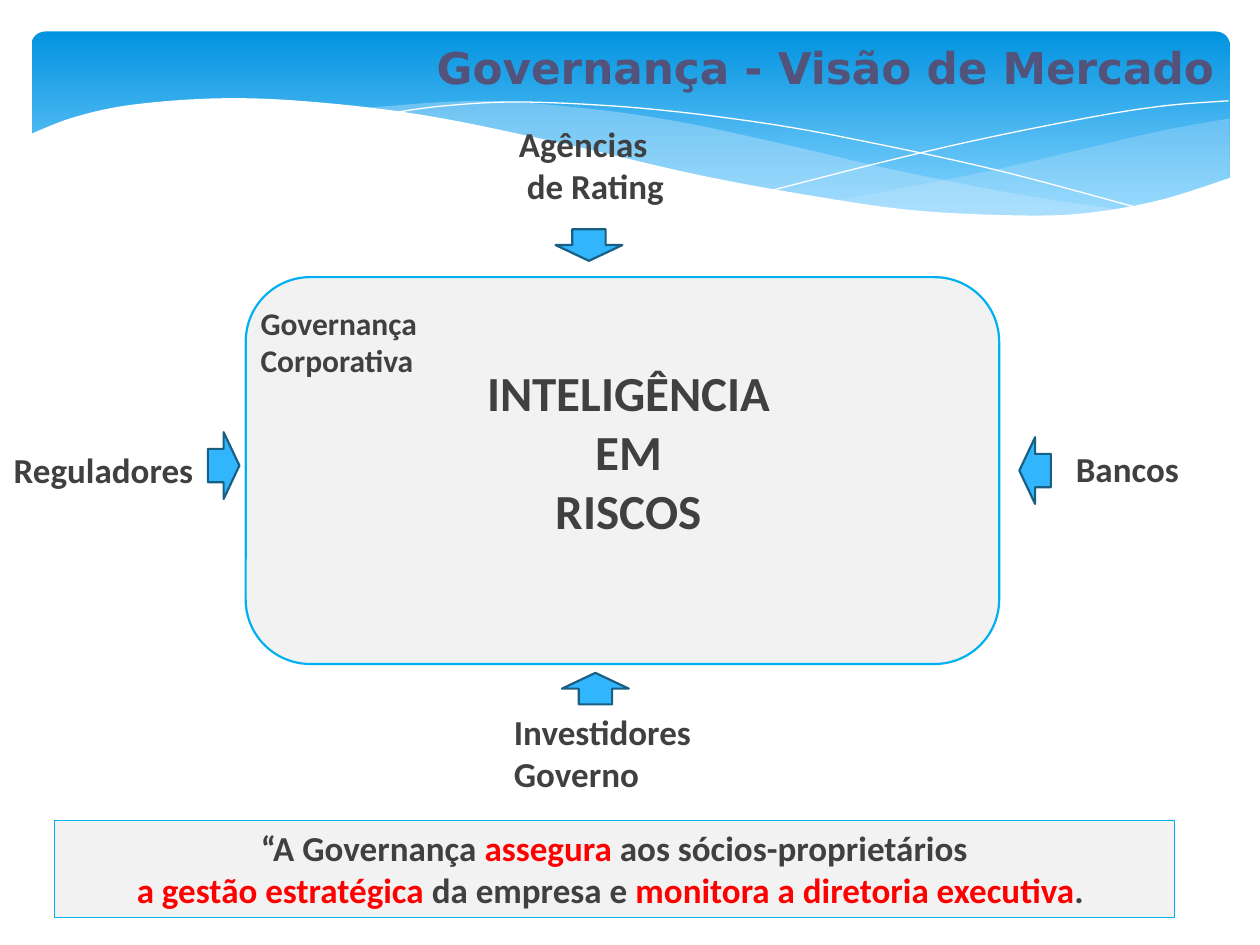
from dataclasses import dataclass

from lxml import etree
from pptx import Presentation
from pptx.dml.color import RGBColor
from pptx.enum.shapes import MSO_SHAPE
from pptx.enum.text import MSO_ANCHOR, MSO_AUTO_SIZE, PP_ALIGN
from pptx.oxml.ns import qn
from pptx.util import Inches, Pt

RECT = MSO_SHAPE.RECTANGLE
ROUND = MSO_SHAPE.ROUNDED_RECTANGLE
ARROW = MSO_SHAPE.DOWN_ARROW
LEFT, CENTER = PP_ALIGN.LEFT, PP_ALIGN.CENTER
TOP, MIDDLE = MSO_ANCHOR.TOP, MSO_ANCHOR.MIDDLE
FIT = MSO_AUTO_SIZE.SHAPE_TO_FIT_TEXT

DARK, RED, WHITE = "404040", "FF0000", "FFFFFF"
GRAY, CYAN, BLUE, NAVY = "F2F2F2", "00B0F0", "31B6FD", "195F84"

Point = tuple[float, float]
Box = tuple[float, float, float, float]
Run = tuple[str, str]


@dataclass
class Wave:
    arcs: list[list[Point]]
    fill: str = ""
    alpha: int = 100


@dataclass
class Label:
    box: Box
    lines: list[str]
    size: int = 20
    align: PP_ALIGN = LEFT


@dataclass
class Arrow:
    left: float
    top: float
    turn: int


WAVES = [
    Wave([[(9.76, 0.94), (9.21, 1.04), (8.61, 1.18), (7.79, 1.37), (6.61, 1.6)],
          [(6.61, 1.6), (7.32, 1.68), (8.03, 1.72), (8.72, 1.69), (9.28, 1.58),
           (9.76, 1.41)]], "C6E7FC", 29),
    Wave([[(8.93, 1.67), (8.07, 1.54), (7.06, 1.34), (6.29, 1.16), (5.41, 0.97),
           (4.65, 0.86), (3.8, 0.8), (2.86, 0.86)],
          [(2.86, 0.86), (3.62, 0.97), (4.49, 1.16), (5.66, 1.43), (6.65, 1.61),
           (7.61, 1.71), (8.28, 1.73), (8.93, 1.67)]], "C6E7FC", 40),
    Wave([[(3.09, 0.9), (3.53, 0.84), (4.16, 0.81), (5.1, 0.86), (6.08, 0.98),
           (6.95, 1.14), (7.95, 1.36), (9.07, 1.66)]]),
    Wave([[(6.13, 1.51), (6.95, 1.3), (7.76, 1.11), (8.66, 0.93), (9.24, 0.84),
           (9.75, 0.8)]]),
    Wave([[(9.77, 1.41), (9.2, 1.59), (8.63, 1.69), (8.09, 1.71), (7.26, 1.67),
           (6.48, 1.56), (5.55, 1.39), (4.47, 1.14), (3.4, 0.92), (2.5, 0.81),
           (1.77, 0.78), (1.06, 0.83), (0.59, 0.93), (0.23, 1.07)],
          [(0.23, 2.24), (9.77, 2.24)]], WHITE),
]
LABELS = [
    Label((4.02, 0.92, 1.41, 0.77), ["Agências", " de Rating"]),
    Label((8.44, 3.5, 1.08, 0.44), ["Bancos"]),
    Label((0.01, 3.51, 1.68, 0.44), ["Reguladores"]),
    Label((3.98, 5.59, 1.69, 0.77), ["Investidores", "Governo"]),
    Label((1.97, 2.36, 1.47, 0.71), ["Governança", "Corporativa"], 18),
    Label((3.73, 2.83, 2.52, 1.51), ["INTELIGÊNCIA", "EM", "RISCOS"], 28, CENTER),
]
ARROWS = [Arrow(4.41, 1.82, 0), Arrow(1.51, 3.57, 270),
          Arrow(7.95, 3.61, 90), Arrow(4.46, 5.34, 180)]
QUOTE = [
    [("“A Governança ", DARK), ("assegura ", RED),
     ("aos sócios-proprietários", DARK)],
    [("a gestão estratégica ", RED), ("da empresa e ", DARK),
     ("monitora a diretoria executiva", RED), (". ", DARK)],
]


def paint(color, code: str) -> None:
    color.rgb = RGBColor.from_string(code)


def place(shape, box: Box) -> None:
    shape.left, shape.top, shape.width, shape.height = map(Inches, box)


def style(shape, fill: str = "", line: str = "", width: float = 0) -> None:
    """Set fill and line; an empty colour means none."""
    shape.shadow.inherit = False
    if fill:
        shape.fill.solid()
        paint(shape.fill.fore_color, fill)
    else:
        shape.fill.background()
    if line:
        paint(shape.line.color, line)
        shape.line.width = Pt(width)
    else:
        shape.line.fill.background()


def add_box(shapes, kind: MSO_SHAPE, box: Box, fill: str, line: str, width: float):
    shape = shapes.add_shape(kind, *map(Inches, box))
    style(shape, fill, line, width)
    return shape


def write(frame, lines: list[list[Run]], size: int, align: PP_ALIGN,
          font: str = "Calibri", wrap: bool = False) -> None:
    frame.word_wrap = wrap
    frame.auto_size = FIT
    for i, runs in enumerate(lines):
        para = frame.add_paragraph() if i else frame.paragraphs[0]
        para.alignment = align
        for text, color in runs:
            run = para.add_run()
            run.text = text
            run.font.name, run.font.size, run.font.bold = font, Pt(size), True
            paint(run.font.color, color)


def smooth(arc: list[Point], steps: int = 8) -> list[Point]:
    """Return points on a Catmull-Rom curve through the arc."""
    ends = [arc[0], *arc, arc[-1]]
    curve = [arc[0]]
    for a, b, c, d in zip(ends, ends[1:], ends[2:], ends[3:]):
        for t in (n / steps for n in range(1, steps + 1)):
            curve.append(tuple(
                q + t * (r - p) / 2 + t**2 * (2 * p - 5 * q + 4 * r - s) / 2
                + t**3 * (3 * q - p - 3 * r + s) / 2
                for p, q, r, s in zip(a, b, c, d)))
    return curve


def add_wave(shapes, wave: Wave) -> None:
    first, *rest = [(Inches(x), Inches(y))
                    for arc in wave.arcs for x, y in smooth(arc)]
    pen = shapes.build_freeform(*first)
    pen.add_line_segments(rest, close=bool(wave.fill))
    shape = pen.convert_to_shape()
    style(shape, wave.fill, "" if wave.fill else WHITE)
    if wave.alpha < 100:
        color = shape.fill._xPr.find(".//" + qn("a:srgbClr"))
        etree.SubElement(color, qn("a:alpha"), val=str(wave.alpha * 1000))


def add_band(shapes) -> None:
    band = add_box(shapes, ROUND, (0.25, 0.25, 9.51, 1.56), BLUE, "", 0)
    band.adjustments[0] = 0.07
    band.fill.gradient()
    band.fill.gradient_angle = 270
    stops = [(0, "0293E0"), (0.9, "83D3FE")]
    for stop, (spot, code) in zip(band.fill.gradient_stops, stops):
        stop.position = spot
        paint(stop.color, code)


def add_label(shapes, label: Label) -> None:
    box = shapes.add_textbox(*map(Inches, label.box))
    lines = [[(line, DARK)] for line in label.lines]
    write(box.text_frame, lines, label.size, label.align)


def main() -> None:
    deck = Presentation()
    deck.slide_width, deck.slide_height = Inches(10), Inches(7.5)
    shapes = deck.slides.add_slide(deck.slide_layouts[5]).shapes

    add_band(shapes)
    for wave in WAVES:
        add_wave(shapes, wave)

    title = shapes.title
    shapes._spTree.append(title._element)  # bring in front of the band
    place(title, (3.35, 0.19, 6.4, 0.61))
    write(title.text_frame, [[("Governança - Visão de Mercado", "52527A")]],
          25, CENTER, "DejaVu Sans")
    title.text_frame.vertical_anchor = TOP
    title.text_frame.paragraphs[0].line_spacing = 1.2

    quote = add_box(shapes, RECT, (0.43, 6.51, 8.89, 0.77), GRAY, CYAN, 0.75)
    write(quote.text_frame, QUOTE, 20, CENTER, wrap=True)
    quote.text_frame.vertical_anchor = MIDDLE

    add_box(shapes, ROUND, (1.95, 2.2, 5.98, 3.07), GRAY, CYAN, 1.25)
    for arrow in ARROWS:
        box = (arrow.left, arrow.top, 0.53, 0.25)
        add_box(shapes, ARROW, box, BLUE, NAVY, 1.25).rotation = arrow.turn
    for label in LABELS:
        add_label(shapes, label)

    deck.save("out.pptx")


if __name__ == "__main__":
    main()
